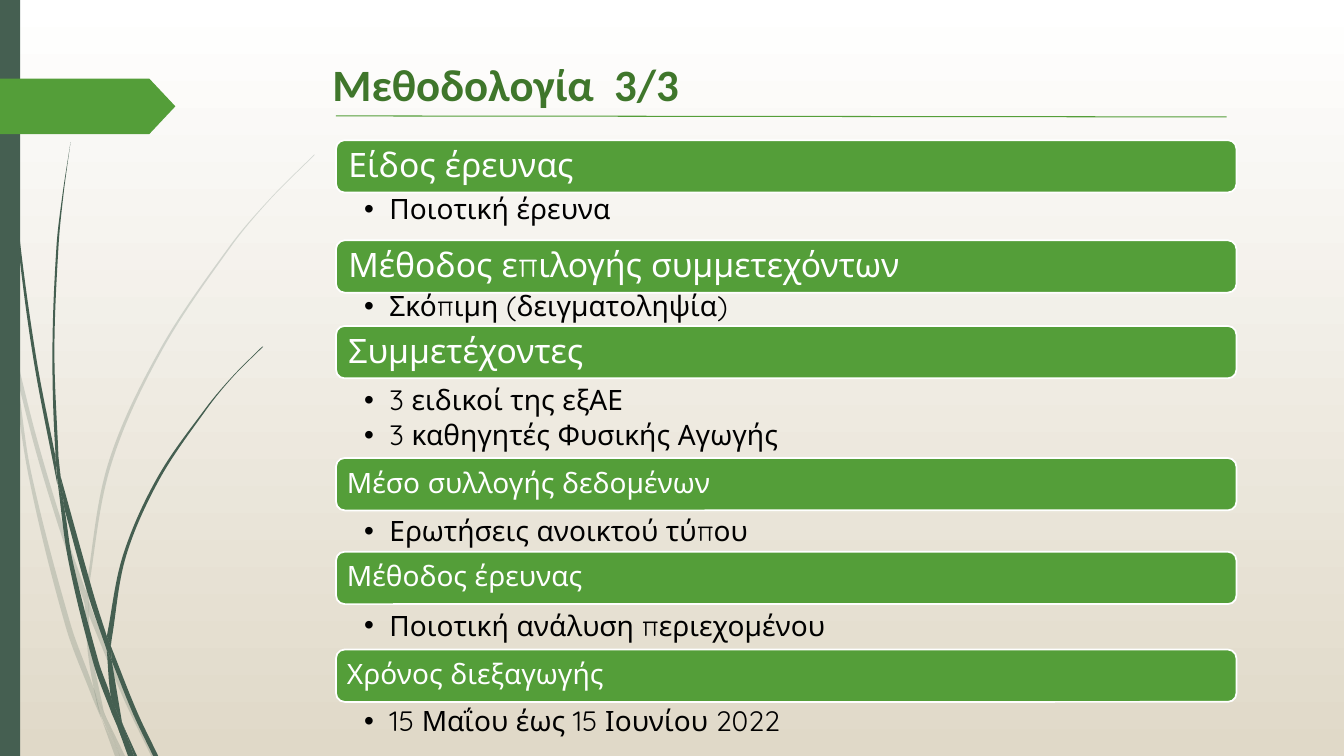
from dataclasses import dataclass
from math import dist
from typing import NamedTuple

from lxml.etree import SubElement
from pptx import Presentation
from pptx.dml.color import RGBColor as Rgb
from pptx.enum.shapes import MSO_CONNECTOR as Connector, MSO_SHAPE as Preset
from pptx.enum.text import MSO_ANCHOR as Anchor, PP_ALIGN as Align
from pptx.oxml.ns import qn
from pptx.util import Emu, Pt

COLUMNS, ROWS = 40, 22.5
SLIDE_WIDTH, SLIDE_HEIGHT = 12192000, 6858000
COLORS = {
    "white": "FFFFFF",
    "sand": "E0D9C8",
    "pine": "455F51",
    "green": "549E39",
    "forest": "3F762B",
    "black": "000000",
}
LIST_LEFT, LIST_WIDTH, BAR_HEIGHT, LINE_HEIGHT = 10, 26.8, 1.56, 1
Edge = list[tuple[float, float]]


class Blade(NamedTuple):
    near: Edge
    far: Edge


@dataclass
class Topic:
    heading: str
    answers: list[str]
    bar_row: float
    answer_row: float
    size: int = 20


PALE_BLADES = [
    Blade([(0, 8.46), (0.27, 9.66), (0.33, 10.5)], [(0.3, 10.32), (0, 8.97)]),
    Blade([(0.42, 10.35), (1.08, 12.99), (1.86, 15.6), (2.55, 17.58)],
          [(2.52, 17.97), (1.74, 15.66), (1.08, 13.48), (0.51, 11.28)]),
    Blade([(2.64, 17.88), (2.76, 18.21), (3.81, 20.76), (4.65, 22.5)],
          [(4.5, 22.5), (3.69, 20.82), (2.64, 18.3)]),
    Blade([(3.15, 21.33), (3.72, 22.5)], [(3.57, 22.5)]),
    Blade([(0.33, 10.5), (0.51, 11.28), (0.93, 14.07), (2.1, 18.57), (2.79, 20.49), (3.03, 21.42)],
          [(2.76, 20.79), (1.95, 18.63), (0.84, 14.1), (0.33, 10.5)]),
    Blade([(2.52, 17.97), (2.61, 19.38), (2.79, 20.49), (2.88, 20.76), (3.15, 21.33)],
          [(3.09, 21.18), (2.73, 19.38), (2.64, 18.3)]),
    Blade([(2.55, 17.58), (3.21, 13.83), (4.74, 10.44), (6.84, 7.32), (8.04, 5.91), (9.36, 4.59)],
          [(9.36, 4.62), (8.04, 5.94), (6.87, 7.35), (4.8, 10.47), (3.3, 13.86), (2.64, 17.52),
           (2.64, 17.88)]),
    Blade([(3.03, 21.42), (3.42, 22.5)], [(3.57, 22.5)]),
    Blade([(2.55, 17.58), (2.64, 17.88), (2.64, 18.3)], [(2.52, 17.97)]),
    Blade([(2.79, 20.49), (2.97, 21.21), (3.57, 22.5)], [(3.15, 21.33), (2.88, 20.76)]),
]
DARK_BLADES = [
    Blade([(0.09, 0), (0.12, 1.44), (0.21, 3.3), (0.51, 6.99), (0.99, 10.65), (1.71, 14.43)],
          [(1.65, 13.59), (1.08, 10.65), (0.57, 6.96), (0.24, 3.27), (0.15, 1.44), (0.12, 0)]),
    Blade([(1.8, 14.16), (2.79, 17.7), (3.18, 18.93)],
          [(3.18, 19.35), (2.64, 17.76), (1.92, 15.15)]),
    Blade([(3.3, 19.23), (4.08, 21.18), (4.71, 22.5)],
          [(4.56, 22.5), (3.96, 21.24), (3.33, 19.68)]),
    Blade([(1.71, 14.31), (1.92, 15.15), (2.16, 16.68), (2.94, 19.71), (3.3, 20.73), (3.51, 21.66)],
          [(3.33, 21.24), (2.79, 19.77), (2.04, 16.71), (1.71, 14.31)]),
    Blade([(2.1, 4.23), (1.86, 5.79), (1.68, 7.35), (1.56, 10.47), (1.65, 13.47), (1.8, 14.16)],
          [(1.74, 13.59), (1.62, 10.47), (1.74, 7.35), (1.89, 5.79), (2.1, 4.23)]),
    Blade([(3.66, 21.57), (4.08, 22.5)], [(3.99, 22.5)]),
    Blade([(1.65, 13.47), (1.8, 14.16), (1.92, 15.15)], [(1.71, 14.31), (1.65, 13.59)]),
    Blade([(3.18, 18.93), (3.66, 16.53), (4.68, 14.22), (6.12, 12.15), (6.93, 11.19), (7.8, 10.32)],
          [(7.83, 10.32), (6.93, 11.22), (6.15, 12.18), (4.74, 14.28), (3.75, 16.56), (3.33, 18.99),
           (3.3, 19.23)]),
    Blade([(3.51, 21.66), (3.81, 22.5)], [(3.93, 22.5)]),
    Blade([(3.18, 19.35), (3.3, 20.73), (3.48, 21.18), (3.66, 21.57)],
          [(3.63, 21.48), (3.33, 19.68)]),
    Blade([(3.18, 18.93), (3.3, 19.23), (3.33, 19.68)], [(3.18, 19.35)]),
    Blade([(3.3, 20.73), (3.51, 21.66), (3.9, 22.5)], [(3.99, 22.5), (3.66, 21.57), (3.48, 21.18)]),
]
TOPICS = [
    Topic("Είδος έρευνας", ["Ποιοτική έρευνα"], 4.17, 5.73, 24),
    Topic("Μέθοδος επιλογής συμμετεχόντων", ["Σκόπιμη (δειγματοληψία)"], 7.15, 8.62, 24),
    Topic("Συμμετέχοντες", ["3 ειδικοί της εξΑΕ", "3 καθηγητές Φυσικής Αγωγής"], 9.7, 11.41, 24),
    Topic("Μέσο συλλογής δεδομένων", ["Ερωτήσεις ανοικτού τύπου"], 13.63, 15.3),
    Topic("Μέθοδος έρευνας", ["Ποιοτική ανάλυση περιεχομένου"], 16.42, 18.12),
    Topic("Χρόνος διεξαγωγής", ["15 Μαΐου έως 15 Ιουνίου 2022"], 19.33, 20.95),
]


def across(columns: float) -> Emu:
    return Emu(round(columns * SLIDE_WIDTH / COLUMNS))


def down(rows: float) -> Emu:
    return Emu(round(rows * SLIDE_HEIGHT / ROWS))


def color(name: str) -> Rgb:
    return Rgb.from_string(COLORS[name])


def area(left: float, top: float, width: float, height: float) -> tuple[Emu, Emu, Emu, Emu]:
    return across(left), down(top), across(width), down(height)


def paint(shape, fill: str) -> None:
    shape.shadow.inherit = False
    shape.fill.solid()
    shape.fill.fore_color.rgb = color(fill)
    shape.line.fill.background()


def write(frame, lines: list[str], font: str, size: int, ink: str, bold: bool = False) -> None:
    frame.word_wrap = True
    frame.text = "\n".join(lines)
    for paragraph in frame.paragraphs:
        paragraph.alignment = Align.LEFT
        for run in paragraph.runs:
            run.font.name, run.font.size, run.font.bold = font, Pt(size), bold
            run.font.color.rgb = color(ink)


def pad(frame, left: float, top: float, right: float, bottom: float) -> None:
    frame.margin_left, frame.margin_right = across(left), across(right)
    frame.margin_top, frame.margin_bottom = down(top), down(bottom)


def bend(edge: Edge) -> list[Edge]:
    padded = [edge[0], *edge, edge[-1]]
    slopes = []
    for before, here, after in zip(padded, edge, padded[2:]):
        reach = (dist(before, here) + dist(here, after)) or 1
        slopes.append([(b - a) / reach for a, b in zip(before, after)])
    curves = []
    for start, end, leave, arrive in zip(edge, edge[1:], slopes, slopes[1:]):
        third = dist(start, end) / 3
        curves.append([
            (start[0] + third * leave[0], start[1] + third * leave[1]),
            (end[0] - third * arrive[0], end[1] - third * arrive[1]),
            end,
        ])
    return curves


def draw_blade(slide, blade: Blade, opacity: int) -> None:
    corners = [(across(x), down(y)) for x, y in blade.near + blade.far]
    outline = slide.shapes.build_freeform(*corners[0])
    outline.add_line_segments(corners[1:], close=True)
    grass = outline.convert_to_shape()
    paint(grass, "pine")
    if opacity < 100:
        tint = grass.fill._xPr.find(qn("a:solidFill"))[0]
        SubElement(tint, qn("a:alpha"), val=str(opacity * 1000))
    curves = [*bend(blade.near), [blade.far[0]], *bend(blade.far)]
    for segment, points in zip(list(grass._element.iter(qn("a:lnTo"))), curves):
        if len(points) == 3:
            segment.tag = qn("a:cubicBezTo")
            segment.remove(segment[0])
            for x, y in points:
                SubElement(segment, qn("a:pt"), x=str(across(x) - grass.left), y=str(down(y) - grass.top))


def draw_topic(slide, topic: Topic) -> None:
    bar = slide.shapes.add_shape(
        Preset.ROUNDED_RECTANGLE, *area(LIST_LEFT, topic.bar_row, LIST_WIDTH, BAR_HEIGHT))
    paint(bar, "green")
    bar.line.color.rgb, bar.line.width = color("white"), Pt(1.25)
    heading = bar.text_frame
    write(heading, [topic.heading], "Quicksand", topic.size, "white")
    pad(heading, topic.size / 80, 0, 0.3, 0)
    heading.vertical_anchor = Anchor.MIDDLE
    heading.paragraphs[0].line_spacing = 0.9

    answers = slide.shapes.add_textbox(
        *area(LIST_LEFT, topic.answer_row, LIST_WIDTH, LINE_HEIGHT * len(topic.answers))).text_frame
    write(answers, topic.answers, "Quicksand", 20, "black")
    pad(answers, 0.84, 0.09, 0.48, 0.09)
    for answer in answers.paragraphs:
        answer.line_spacing, answer.space_after = 0.9, Pt(3.6)
        properties = answer._p.get_or_add_pPr()
        properties.set("marL", str(across(0.75)))
        properties.set("indent", str(-across(0.75)))
        SubElement(properties, qn("a:buFont"), typeface="Arial")
        SubElement(properties, qn("a:buChar"), char="•")


def main() -> None:
    deck = Presentation()
    deck.slide_width, deck.slide_height = Emu(SLIDE_WIDTH), Emu(SLIDE_HEIGHT)
    slide = deck.slides.add_slide(deck.slide_layouts[6])
    backdrop = slide.background.fill
    backdrop.gradient()
    backdrop.gradient_angle = 270
    for stop, shade in zip(backdrop.gradient_stops, ("white", "sand")):
        stop.color.rgb = color(shade)

    for blades, opacity in ((PALE_BLADES, 20), (DARK_BLADES, 100)):
        for blade in blades:
            draw_blade(slide, blade, opacity)
    paint(slide.shapes.add_shape(Preset.RECTANGLE, *area(0, 0, 0.6, ROWS)), "pine")
    pennant = slide.shapes.add_shape(Preset.PENTAGON, *area(0, 2.34, 5.22, 1.65))
    pennant.adjustments[0] = 0.47
    paint(pennant, "green")

    title = slide.shapes.add_textbox(*area(9.6, 1.89, 11.58, 1.56)).text_frame
    write(title, ["Μεθοδολογία  3/3"], "Calibri", 32, "forest", bold=True)
    pad(title, 0.3, 0.15, 0.3, 0.15)
    title.vertical_anchor = Anchor.BOTTOM
    rule = slide.shapes.add_connector(
        Connector.STRAIGHT, across(10), down(3.45), across(36.51), down(3.48))
    rule.line.color.rgb, rule.line.width = color("green"), Pt(0.75)
    SubElement(rule._element.spPr, qn("a:effectLst"))
    for topic in TOPICS:
        draw_topic(slide, topic)
    deck.save("out.pptx")


if __name__ == "__main__":
    main()
